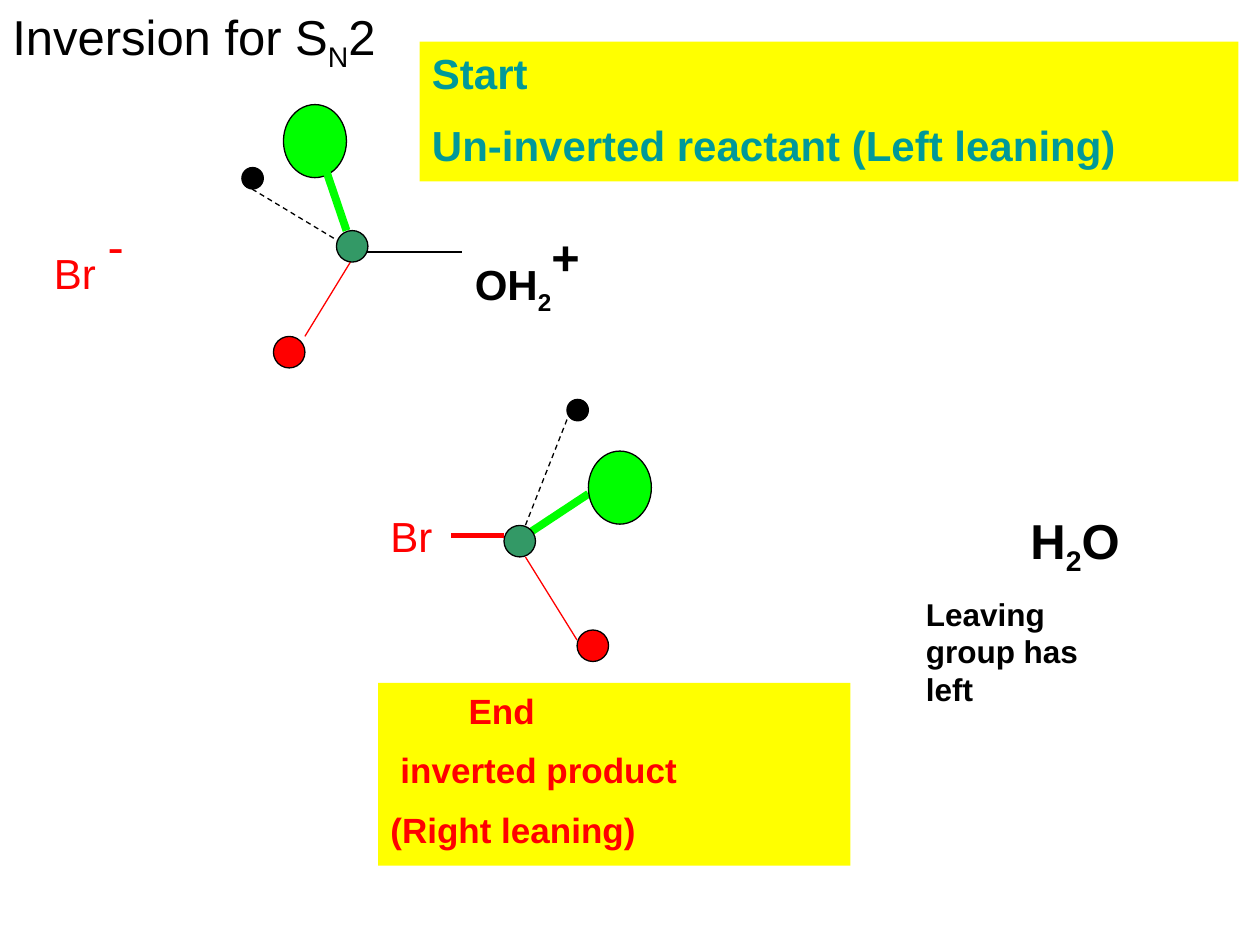
import pptx
import pptx.dml.color
import pptx.enum.dml
import pptx.enum.shapes
import pptx.enum.text
import pptx.oxml
import pptx.oxml.ns
import pptx.util

Inches = pptx.util.Inches
Pt = pptx.util.Pt
RGBColor = pptx.dml.color.RGBColor
Shape = pptx.enum.shapes.MSO_SHAPE

BLACK = RGBColor(0x00, 0x00, 0x00)
RED = RGBColor(0xFF, 0x00, 0x00)
GREEN = RGBColor(0x00, 0xFF, 0x00)
CARBON_GREEN = RGBColor(0x33, 0x99, 0x66)
TEAL = RGBColor(0x00, 0x99, 0x99)
YELLOW = RGBColor(0xFF, 0xFF, 0x00)

SUBSCRIPT = -25
SUPERSCRIPT = 30

ATOMS = {
    "small": (0.17, 0.17, BLACK),
    "large": (0.5, 0.58, GREEN),
    "carbon": (0.25, 0.25, CARBON_GREEN),
    "red": (0.25, 0.25, RED),
}
BONDS = {
    "dashed": (BLACK, 0.75, pptx.enum.dml.MSO_LINE.DASH),
    "plain": (BLACK, 0.75, None),
    "red": (RED, 0.75, None),
    "wedge": (GREEN, 4.5, None),
    "new": (RED, 3, None),
}


def apply_format(target, values):
    for name, value in values.items():
        setattr(target, name, value)


def write_text(shape, paragraphs, size, color, bold=False, spaced=True):
    frame = shape.text_frame
    apply_format(frame, {
        "word_wrap": True,
        "auto_size": pptx.enum.text.MSO_AUTO_SIZE.SHAPE_TO_FIT_TEXT,
        "vertical_anchor": pptx.enum.text.MSO_ANCHOR.TOP,
    })
    for index, (indent, runs) in enumerate(paragraphs):
        paragraph = frame.paragraphs[0] if index == 0 else frame.add_paragraph()
        paragraph.alignment = pptx.enum.text.PP_ALIGN.LEFT
        properties = paragraph._p.get_or_add_pPr()
        properties.set("marL", str(Inches(indent)))
        if spaced:
            properties.append(pptx.oxml.parse_xml(
                f'<a:spcBef {pptx.oxml.ns.nsdecls("a")}><a:spcPct val="50000"/></a:spcBef>'))
        for text, baseline, run_size in runs:
            run = paragraph.add_run()
            run.text = text
            apply_format(run.font, {"name": "Arial", "size": Pt(run_size or size), "bold": bold})
            run.font.color.rgb = color
            if baseline:
                run._r.get_or_add_rPr().set("baseline", str(baseline * 1000))


def add_label(slide, box, runs, size, color, bold=False, spaced=True):
    label = slide.shapes.add_textbox(*map(Inches, box))
    write_text(label, [(0, runs)], size, color, bold, spaced)


def add_banner(slide, box, lines, size, color):
    banner = slide.shapes.add_shape(Shape.RECTANGLE, *map(Inches, box))
    banner.shadow.inherit = False
    banner.fill.solid()
    banner.fill.fore_color.rgb = YELLOW
    banner.line.fill.background()
    paragraphs = [(indent, [(text, 0, None)]) for indent, text in lines]
    write_text(banner, paragraphs, size, color, bold=True)


def add_bond(slide, left, top, kind, start, end):
    color, width, dash = BONDS[kind]
    bond = slide.shapes.add_connector(
        pptx.enum.shapes.MSO_CONNECTOR.STRAIGHT,
        Inches(left + start[0]), Inches(top + start[1]),
        Inches(left + end[0]), Inches(top + end[1]))
    bond.line.color.rgb = color
    apply_format(bond.line, {"width": Pt(width), "dash_style": dash})
    bond._element.spPr.append(pptx.oxml.parse_xml(
        f'<a:effectLst {pptx.oxml.ns.nsdecls("a")}/>'))


def add_atom(slide, left, top, kind, offset):
    width, height, color = ATOMS[kind]
    atom = slide.shapes.add_shape(
        Shape.OVAL, Inches(left + offset[0]), Inches(top + offset[1]),
        Inches(width), Inches(height))
    atom.shadow.inherit = False
    atom.fill.solid()
    atom.fill.fore_color.rgb = color
    atom.line.color.rgb = BLACK
    atom.line.width = Pt(0.75)


def add_molecule(slide, left, top, back_bonds, atoms, front_bonds):
    for bond in back_bonds:
        add_bond(slide, left, top, *bond)
    for atom in atoms:
        add_atom(slide, left, top, *atom)
    for bond in front_bonds:
        add_bond(slide, left, top, *bond)


def add_reactant(slide, left, top):
    center = (0.91, 1.17)
    add_molecule(
        slide, left, top,
        [("dashed", (0.08, 0.67), center),
         ("red", center, (0.5, 1.84)),
         ("plain", center, (1.75, 1.17))],
        [("red", (0.25, 1.84)), ("small", (0, 0.5)),
         ("large", (0.33, 0)), ("carbon", (0.75, 1))],
        [("wedge", (0.83, 1), (0.66, 0.5))])
    add_label(slide, (left - 1.59, top + 0.75, 1, 0.9),
              [("Br ", 0, None), ("-", SUPERSCRIPT, 48)], 24, RED)
    add_label(slide, (left + 1.75, top + 0.84, 1.25, 0.63),
              [("OH", 0, None), ("2", SUBSCRIPT, None), ("+", SUPERSCRIPT, 48)],
              24, BLACK, bold=True)


def add_product(slide, left, top):
    add_molecule(
        slide, left, top,
        [("wedge", (0.59, 1.08), (1.09, 0.75))],
        [("large", (1.09, 0.41)), ("carbon", (0.42, 1)),
         ("small", (0.92, 0)), ("red", (1, 1.83))],
        [("dashed", (0.92, 0.16), (0.59, 1)),
         ("red", (0.59, 1.25), (1, 1.91)),
         ("new", (0.42, 1.08), (0, 1.08))])
    add_label(slide, (left - 0.58, top + 0.83, 0.58, 0.5), [("Br", 0, None)], 24, RED)


def add_leaving_group(slide, left, top):
    add_label(slide, (left + 0.83, top, 1.92, 0.57),
              [("H", 0, None), ("2", SUBSCRIPT, None), ("O", 0, None)],
              28, BLACK, bold=True)
    add_label(slide, (left, top + 0.67, 1.75, 1),
              [("Leaving group has left", 0, None)], 18, BLACK, bold=True)


def main():
    presentation = pptx.Presentation()
    apply_format(presentation, {"slide_width": Inches(10), "slide_height": Inches(7.5)})
    slide = presentation.slides.add_slide(presentation.slide_layouts[6])
    add_banner(slide, (3.33, 0.33, 6.5, 1.11),
               [(0, "Start"), (0, "Un-inverted reactant (Left leaning)")], 24, TEAL)
    add_reactant(slide, 1.92, 0.83)
    add_product(slide, 3.58, 3.17)
    add_banner(slide, (3, 5.42, 3.75, 1.45),
               [(0.62, "End"), (0.08, "inverted product"), (0, "(Right leaning)")], 20, RED)
    add_leaving_group(slide, 7.25, 4)
    add_label(slide, (0, 0, 3.75, 0.57),
              [("Inversion for S", 0, None), ("N", SUBSCRIPT, None), ("2", 0, None)],
              28, BLACK, spaced=False)
    presentation.save("out.pptx")


if __name__ == "__main__":
    main()
